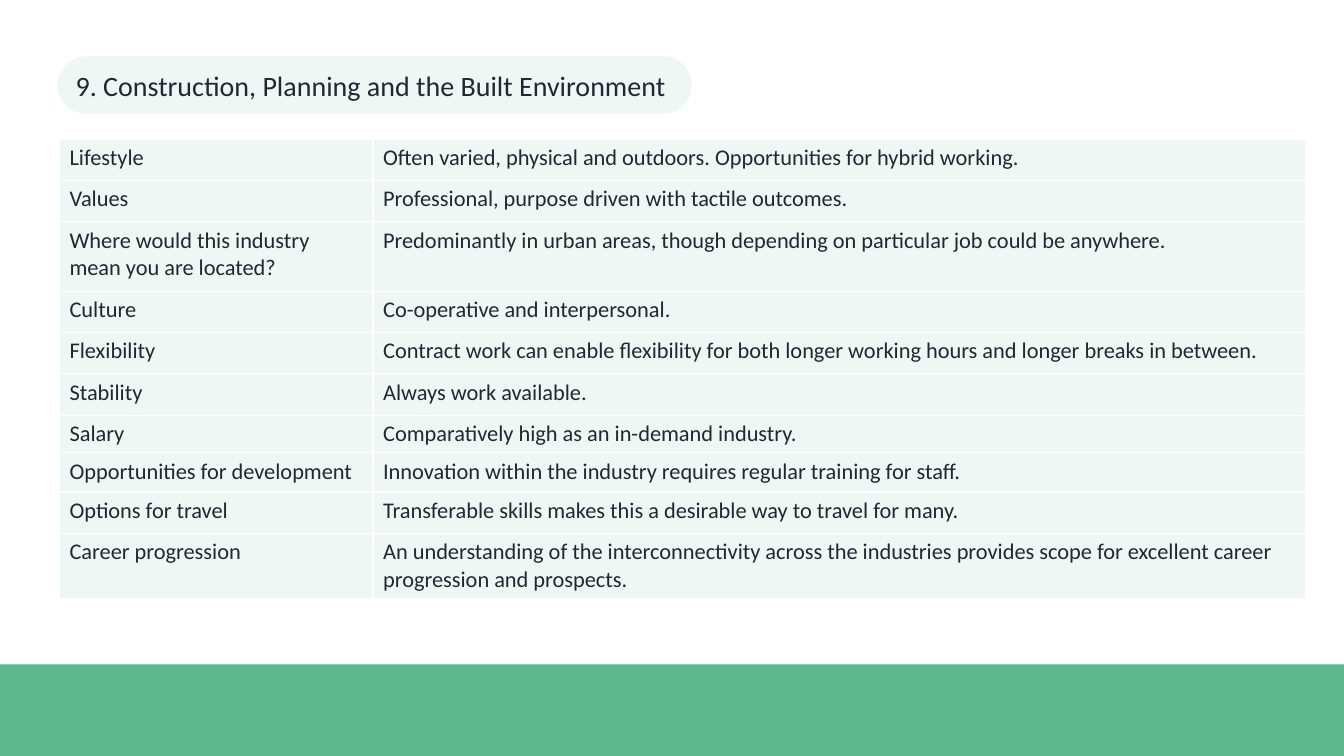
from dataclasses import dataclass

from lxml import etree
from pptx import Presentation
from pptx.dml.color import RGBColor
from pptx.enum.shapes import MSO_SHAPE
from pptx.enum.text import MSO_ANCHOR, MSO_AUTO_SIZE, PP_ALIGN
from pptx.oxml.ns import qn
from pptx.util import Inches, Pt

RECTANGLE = MSO_SHAPE.RECTANGLE
ROUNDED = MSO_SHAPE.ROUNDED_RECTANGLE
MIDDLE = MSO_ANCHOR.MIDDLE
LEFT = PP_ALIGN.LEFT
NO_AUTOFIT = MSO_AUTO_SIZE.NONE

COLOURS = {"green": "5DB88D", "ink": "1F2834", "white": "FFFFFF"}
FONT = "Calibri"
TINT_PERCENT = 10
TITLE_ONLY_LAYOUT = 5
COLUMN_WIDTHS = (3.11, 9.25)


@dataclass(frozen=True)
class Aspect:
    name: str
    description: str
    height: float = 0.41


ASPECTS = [
    Aspect("Lifestyle", "Often varied, physical and outdoors. Opportunities for hybrid working."),
    Aspect("Values", "Professional, purpose driven with tactile outcomes."),
    Aspect("Where would this industry mean you are located?",
           "Predominantly in urban areas, though depending on particular job could be anywhere.", 0.69),
    Aspect("Culture", "Co-operative and interpersonal."),
    Aspect("Flexibility",
           "Contract work can enable flexibility for both longer working hours and longer breaks in between."),
    Aspect("Stability", "Always work available."),
    Aspect("Salary", "Comparatively high as an in-demand industry.", 0.37),
    Aspect("Opportunities for development",
           "Innovation within the industry requires regular training for staff.", 0.39),
    Aspect("Options for travel", "Transferable skills makes this a desirable way to travel for many."),
    Aspect("Career progression",
           "An understanding of the interconnectivity across the industries provides scope for "
           "excellent career progression and prospects.", 0.64),
]


def fill_green(item, element, opacity_percent: int = 100) -> None:
    """Fill a shape or cell, whose XML is element, with green at the given opacity."""
    item.fill.solid()
    item.fill.fore_color.rgb = RGBColor.from_string(COLOURS["green"])
    if opacity_percent < 100:
        colour = element.find(".//" + qn("a:solidFill") + "/" + qn("a:srgbClr"))
        etree.SubElement(colour, qn("a:alpha"), val=str(opacity_percent * 1000))


def add_green_shape(slide, kind, left: float, top: float, width: float, height: float,
                    opacity_percent: int = 100):
    shape = slide.shapes.add_shape(kind, Inches(left), Inches(top), Inches(width), Inches(height))
    shape.shadow.inherit = False
    shape.line.fill.background()
    fill_green(shape, shape.element.spPr, opacity_percent)
    return shape


def write_text(text_frame, text: str, size: int) -> None:
    text_frame.text = text
    paragraph = text_frame.paragraphs[0]
    paragraph.alignment = LEFT
    paragraph.font.name = FONT
    paragraph.font.size = Pt(size)
    paragraph.font.color.rgb = RGBColor.from_string(COLOURS["ink"])


def add_white_borders(cell) -> None:
    properties = cell._tc.get_or_add_tcPr()
    for position, side in enumerate(("a:lnL", "a:lnR", "a:lnT", "a:lnB")):
        line = etree.Element(qn(side), w=str(Pt(1)))
        fill = etree.SubElement(line, qn("a:solidFill"))
        etree.SubElement(fill, qn("a:srgbClr"), val=COLOURS["white"])
        properties.insert(position, line)


def add_title(slide, text: str) -> None:
    pill = add_green_shape(slide, ROUNDED, 0.57, 0.56, 6.29, 0.57, TINT_PERCENT)
    pill.adjustments[0] = 0.5
    title = slide.shapes.title
    title.left, title.top = Inches(0.65), Inches(0.56)
    title.width, title.height = Inches(6.13), Inches(0.57)
    write_text(title.text_frame, text, 20)
    title.text_frame.auto_size = NO_AUTOFIT
    title.text_frame.vertical_anchor = MIDDLE
    slide.shapes._spTree.append(title.element)  # bring the title in front of its pill


def add_aspect_table(slide, aspects: list[Aspect]) -> None:
    frame = slide.shapes.add_table(
        len(aspects), len(COLUMN_WIDTHS), Inches(0.59), Inches(1.38),
        Inches(sum(COLUMN_WIDTHS)), Inches(sum(aspect.height for aspect in aspects)))
    table = frame.table
    table.first_row = False
    table.horz_banding = False
    for column, width in zip(table.columns, COLUMN_WIDTHS):
        column.width = Inches(width)
    for row, aspect in zip(table.rows, aspects):
        row.height = Inches(aspect.height)
        for cell, text in zip(row.cells, (aspect.name, aspect.description)):
            write_text(cell.text_frame, text, 16)
            fill_green(cell, cell._tc.tcPr, TINT_PERCENT)
            add_white_borders(cell)


def main() -> None:
    presentation = Presentation()
    presentation.slide_width = Inches(13.33)
    presentation.slide_height = Inches(7.5)
    slide = presentation.slides.add_slide(presentation.slide_layouts[TITLE_ONLY_LAYOUT])
    add_green_shape(slide, RECTANGLE, 0, 6.59, 13.33, 0.91)
    add_title(slide, "9. Construction, Planning and the Built Environment")
    add_aspect_table(slide, ASPECTS)
    presentation.save("out.pptx")


if __name__ == "__main__":
    main()
